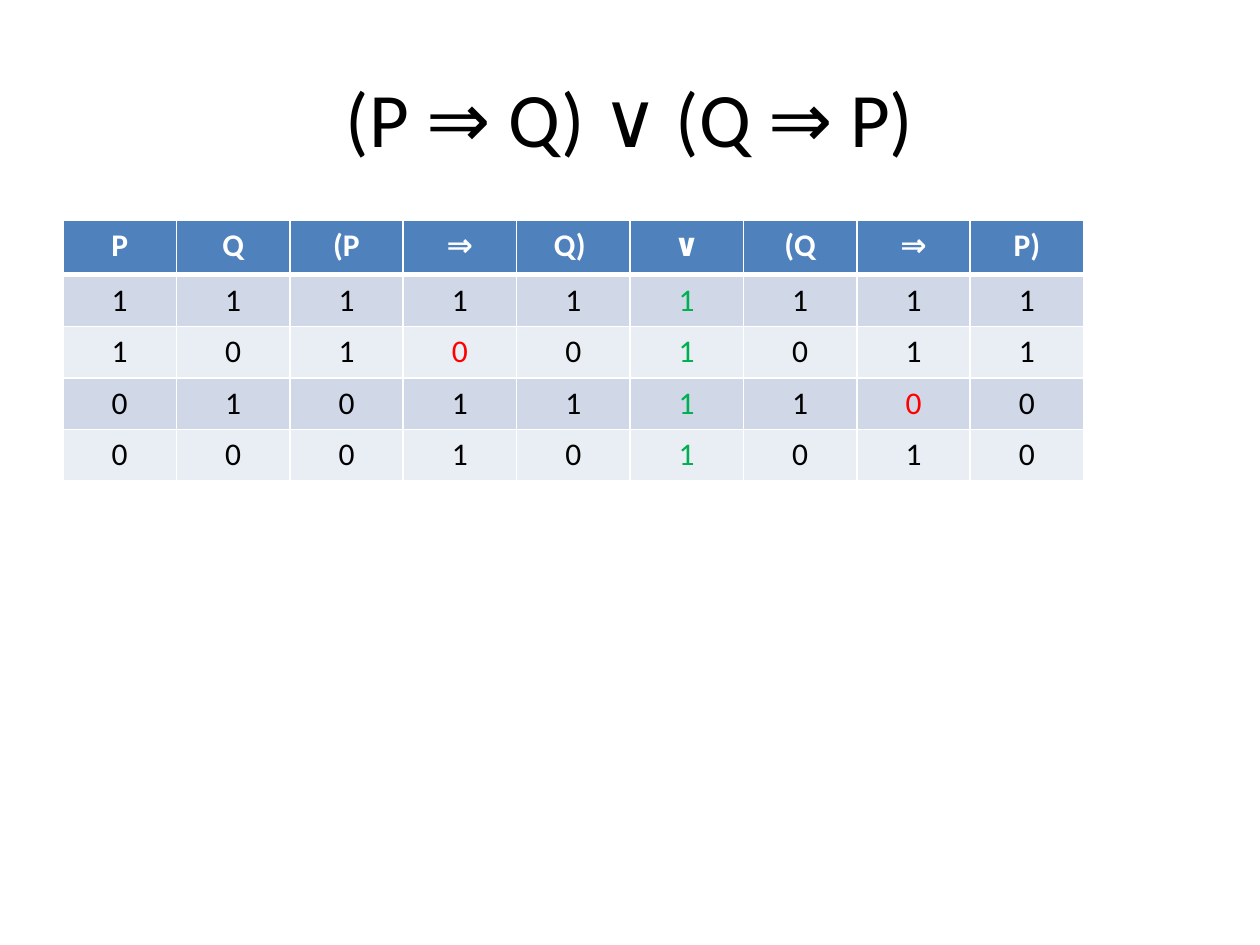
from lxml import etree
from pptx import Presentation
from pptx.dml.color import RGBColor
from pptx.enum.text import MSO_ANCHOR, PP_ALIGN
from pptx.oxml.ns import qn
from pptx.util import Pt

CENTER = PP_ALIGN.CENTER
MIDDLE = MSO_ANCHOR.MIDDLE
FONT = "Calibri"
WHITE, BLACK, GREEN, RED = "FFFFFF", "000000", "00B050", "FF0000"
HEAD_FILL = "4F81BD"
BANDS = ("D0D8E8", "E9EDF4")
HEADS = ["P", "Q", "(P", "⇒", "Q) ", "∨", "(Q", "⇒", "P)"]
TRUTHS = ["111111111", "101001011", "010111100", "000101010"]
MAIN_COL = 5
ARROWS = (3, 7)


def color(code):
    """Turn a hex string into a colour."""
    return RGBColor.from_string(code)


def write(frame, text, size, code, bold=False):
    """Write one centred run into a text frame."""
    para = frame.paragraphs[0]
    para.alignment = CENTER
    run = para.add_run()
    run.text = text
    font = run.font
    font.name, font.size, font.bold = FONT, Pt(size), bold
    font.color.rgb = color(code)


def add_title(slide, text):
    """Place and fill the title."""
    title = slide.shapes.title
    title.left, title.top = Pt(36), Pt(21.6)
    title.width, title.height = Pt(648), Pt(90)
    title.text_frame.vertical_anchor = MIDDLE
    write(title.text_frame, text, 44, BLACK)


def add_edge(cell, side, width):
    """Draw a white border on one side of a cell."""
    props = cell._tc.get_or_add_tcPr()
    line = etree.SubElement(props, qn(f"a:ln{side}"), w=str(Pt(width)))
    fill = etree.SubElement(line, qn("a:solidFill"))
    etree.SubElement(fill, qn("a:srgbClr"), val=WHITE)


def style_cell(cell, row):
    """Give a cell its borders and band fill."""
    for side in "LRTB":
        thick = (row, side) in ((0, "B"), (1, "T"))
        add_edge(cell, side, 3 if thick else 1)
    cell.fill.solid()
    cell.fill.fore_color.rgb = color(BANDS[(row - 1) % 2] if row else HEAD_FILL)


def pick_color(row, col, text):
    """Choose the text colour of a cell."""
    if row == 0:
        return WHITE
    if col == MAIN_COL:
        return GREEN
    return RED if col in ARROWS and text == "0" else BLACK


def add_truths(slide):
    """Add the truth table."""
    rows = [HEADS, *TRUTHS]
    shape = slide.shapes.add_table(
        len(rows), len(HEADS), Pt(36), Pt(126), Pt(583.2), Pt(147.6))
    table = shape.table
    for col in table.columns:
        col.width = Pt(64.8)
    for r, values in enumerate(rows):
        table.rows[r].height = Pt(29.5 if r else 31)
        for c, text in enumerate(values):
            cell = table.cell(r, c)
            style_cell(cell, r)
            write(cell.text_frame, text, 18, pick_color(r, c, text), r == 0)


def main():
    """Build and save the slide."""
    deck = Presentation()
    deck.slide_width, deck.slide_height = Pt(720), Pt(540)
    slide = deck.slides.add_slide(deck.slide_layouts[5])
    add_title(slide, "(P ⇒ Q) ∨ (Q ⇒ P)")
    add_truths(slide)
    deck.save("out.pptx")


if __name__ == "__main__":
    main()
